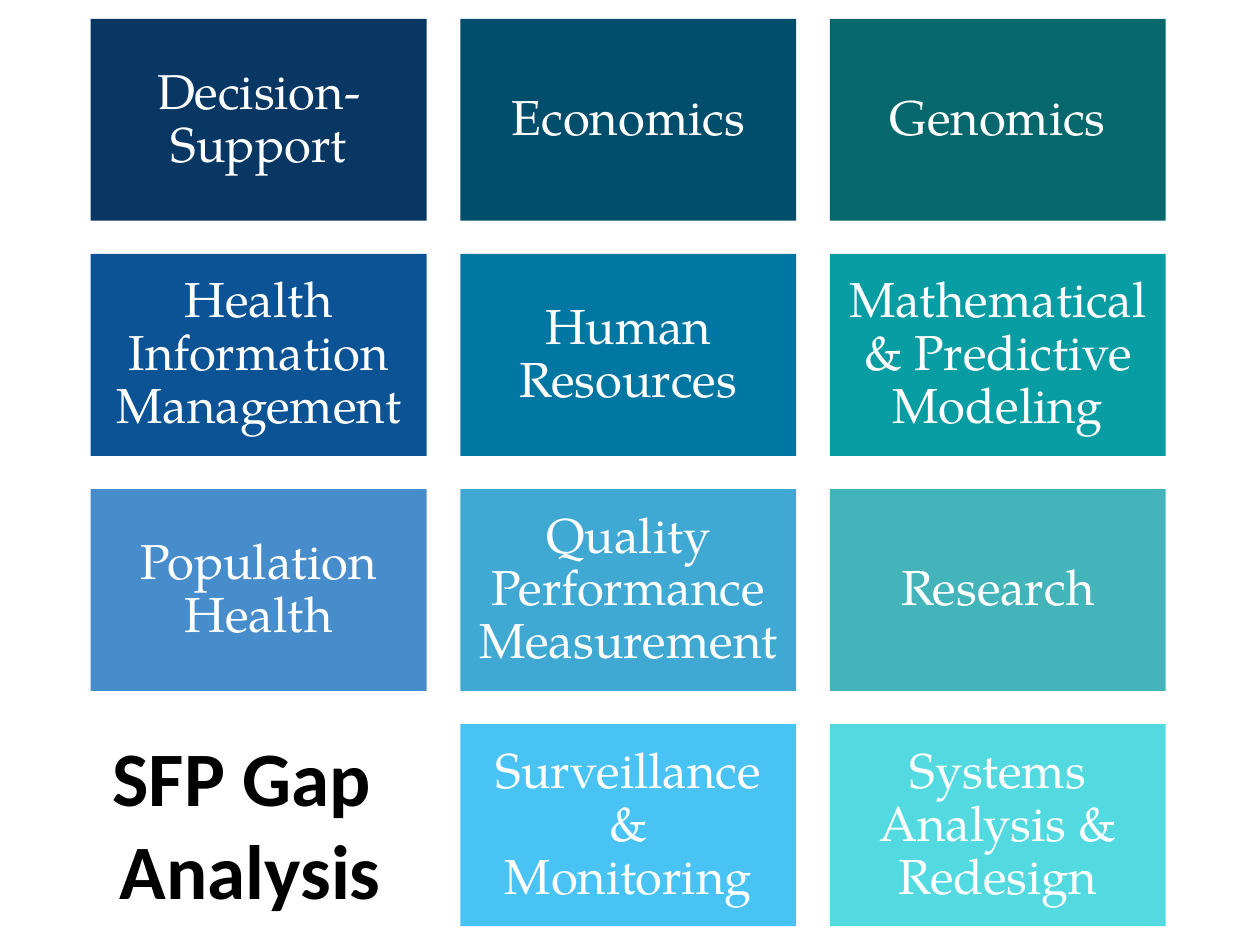
from dataclasses import dataclass

import pptx
import pptx.dml.color
import pptx.enum.shapes
import pptx.enum.text
import pptx.slide
import pptx.util

Cm = pptx.util.Cm
Pt = pptx.util.Pt
RGBColor = pptx.dml.color.RGBColor
Align = pptx.enum.text.PP_ALIGN
Anchor = pptx.enum.text.MSO_ANCHOR

WHITE = RGBColor(0xFF, 0xFF, 0xFF)
BLACK = RGBColor(0x00, 0x00, 0x00)
NAVY = RGBColor(0x08, 0x37, 0x63)
PETROL = RGBColor(0x00, 0x4E, 0x6C)
PINE = RGBColor(0x06, 0x68, 0x6C)
COBALT = RGBColor(0x0B, 0x53, 0x94)
OCEAN = RGBColor(0x00, 0x76, 0xA3)
TEAL = RGBColor(0x08, 0x9C, 0xA3)
STEEL = RGBColor(0x48, 0x8D, 0xCB)
AZURE = RGBColor(0x3F, 0xA9, 0xD3)
LAGOON = RGBColor(0x43, 0xB4, 0xBA)
SKY = RGBColor(0x48, 0xC3, 0xF3)
AQUA = RGBColor(0x53, 0xD9, 0xE0)

LEFT, TOP = 1.83, 0.38
WIDTH, HEIGHT = 6.77, 4.07
STEP_X, STEP_Y = 7.45, 4.74

TILE_FRAME = {
    "word_wrap": True,
    "vertical_anchor": Anchor.MIDDLE,
    "margin_left": Cm(0.3),
    "margin_right": Cm(0.3),
    "margin_top": Cm(0.3),
    "margin_bottom": Cm(0.3),
}
TILE_PARA = {"alignment": Align.CENTER, "line_spacing": 0.9}
TILE_FONT = {"name": "TeX Gyre Pagella", "size": Pt(28)}

TITLE_BOX = {
    "left": Cm(-6.38),
    "top": Cm(16.84),
    "width": Cm(22.86),
    "height": Cm(1.6),
}
TITLE_FRAME = {
    "word_wrap": True,
    "auto_size": pptx.enum.text.MSO_AUTO_SIZE.NONE,
    "vertical_anchor": Anchor.BOTTOM,
    "margin_left": 0,
    "margin_right": 0,
    "margin_top": Cm(0.13),
    "margin_bottom": 0,
}
TITLE_PARA = {"alignment": Align.CENTER}
TITLE_FONT = {"name": "Calibri", "size": Pt(44), "bold": True}


@dataclass
class Tile:
    text: str
    row: int
    col: int
    fill: RGBColor


TILES = [
    Tile("Decision-Support", 0, 0, NAVY),
    Tile("Economics", 0, 1, PETROL),
    Tile("Genomics", 0, 2, PINE),
    Tile("Health Information Management", 1, 0, COBALT),
    Tile("Human Resources", 1, 1, OCEAN),
    Tile("Mathematical & Predictive Modeling", 1, 2, TEAL),
    Tile("Population Health", 2, 0, STEEL),
    Tile("Quality Performance Measurement", 2, 1, AZURE),
    Tile("Research", 2, 2, LAGOON),
    Tile("Surveillance &\vMonitoring", 3, 1, SKY),
    Tile("Systems Analysis & Redesign", 3, 2, AQUA),
]


def assign(target: object, values: dict) -> None:
    for name, value in values.items():
        setattr(target, name, value)


def write(shape, text: str, frame: dict, para: dict, font: dict,
          color: RGBColor) -> None:
    """Fill a shape with one formatted paragraph; a vertical tab breaks a line."""
    body = shape.text_frame
    assign(body, frame)
    body.text = text
    block = body.paragraphs[0]
    assign(block, para)
    for run in block.runs:
        assign(run.font, font)
        run.font.color.rgb = color


def draw_title(slide: pptx.slide.Slide) -> None:
    title = slide.shapes.title
    assign(title, TITLE_BOX)
    write(title, "SFP Gap \vAnalysis", TITLE_FRAME, TITLE_PARA, TITLE_FONT, BLACK)


def draw_tile(slide: pptx.slide.Slide, tile: Tile) -> None:
    box = slide.shapes.add_shape(
        pptx.enum.shapes.MSO_SHAPE.RECTANGLE,
        Cm(LEFT + tile.col * STEP_X), Cm(TOP + tile.row * STEP_Y),
        Cm(WIDTH), Cm(HEIGHT))
    box.shadow.inherit = False
    box.fill.solid()
    box.fill.fore_color.rgb = tile.fill
    box.line.fill.background()
    write(box, tile.text, TILE_FRAME, TILE_PARA, TILE_FONT, WHITE)


def main() -> None:
    deck = pptx.Presentation()
    assign(deck, {"slide_width": Cm(25.4), "slide_height": Cm(19.05)})
    slide = deck.slides.add_slide(deck.slide_layouts.get_by_name("Title Only"))
    draw_title(slide)
    for tile in TILES:
        draw_tile(slide, tile)
    deck.save("out.pptx")


if __name__ == "__main__":
    main()
